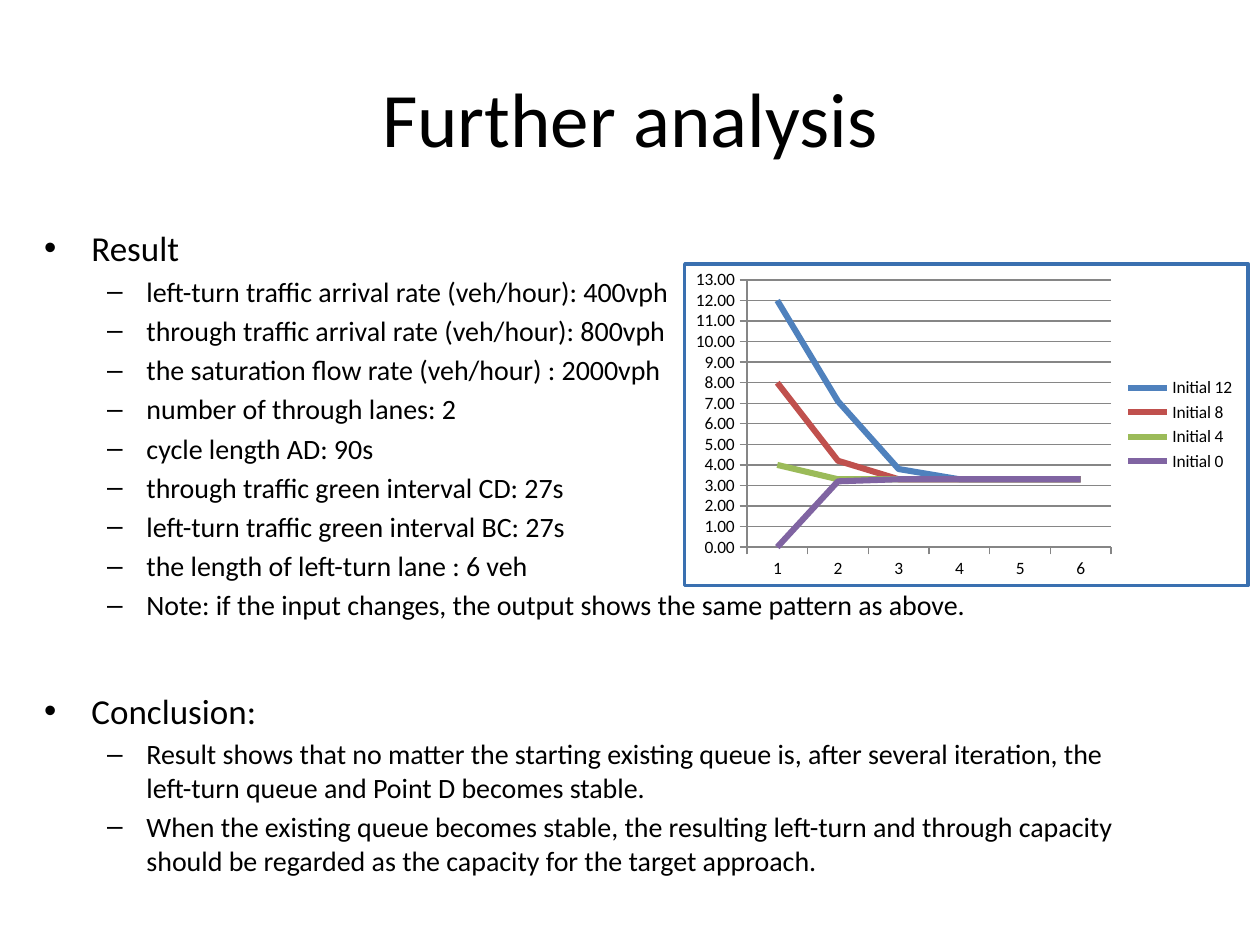
from lxml import etree
from pptx import Presentation
from pptx.chart.data import CategoryChartData
from pptx.dml.color import RGBColor
from pptx.enum import chart as charts, text
from pptx.oxml import parse_xml
from pptx.oxml.ns import nsdecls, qn
from pptx.util import Inches, Pt

FONT = "Calibri"
BLACK = RGBColor(0x00, 0x00, 0x00)
GRAY = RGBColor(0x86, 0x86, 0x86)
WHITE = RGBColor(0xFF, 0xFF, 0xFF)
BORDER = RGBColor(0x3A, 0x70, 0xB0)
BLUE = RGBColor(0x4F, 0x81, 0xBD)
RED = RGBColor(0xC0, 0x50, 0x4D)
GREEN = RGBColor(0x9B, 0xBB, 0x59)
PURPLE = RGBColor(0x80, 0x64, 0xA2)

RESULTS = [
    "left-turn traffic arrival rate (veh/hour): 400vph",
    "through traffic arrival rate (veh/hour): 800vph",
    "the saturation flow rate (veh/hour) : 2000vph",
    "number of through lanes: 2",
    "cycle length AD: 90s",
    "through traffic green interval CD: 27s",
    "left-turn traffic green interval BC: 27s",
    "the length of left-turn lane : 6 veh",
    "Note: if the input changes, the output shows the same pattern as above.",
]
CONCLUSIONS = [
    "Result shows that no matter the starting existing queue is, after several "
    "iteration, the left-turn queue and Point D becomes stable.",
    "When the existing queue becomes stable, the resulting left-turn and through "
    "capacity should be regarded as the capacity for the target approach.",
]
QUEUES = [
    ("Initial 12", BLUE, (12, 7.1, 3.8, 3.3, 3.3, 3.3)),
    ("Initial 8", RED, (8, 4.2, 3.3, 3.3, 3.3, 3.3)),
    ("Initial 4", GREEN, (4, 3.3, 3.3, 3.3, 3.3, 3.3)),
    ("Initial 0", PURPLE, (0, 3.2, 3.3, 3.3, 3.3, 3.3)),
]


def place(shape, box):
    shape.left, shape.top, shape.width, shape.height = map(Inches, box)


def add_span(para, words, size):
    span = para.add_run()
    span.text = words
    span.font.name = FONT
    span.font.size = Pt(size)
    span.font.color.rgb = BLACK


def fill_title(title, box, words):
    place(title, box)
    title.text_frame.vertical_anchor = text.MSO_ANCHOR.MIDDLE
    para = title.text_frame.paragraphs[0]
    para.alignment = text.PP_ALIGN.CENTER
    add_span(para, words, 44)


def fill_list(body, box, heading, items):
    """Heading bullet followed by dashed items; the template gives the marks."""
    place(body, box)
    frame = body.text_frame
    frame.auto_size = text.MSO_AUTO_SIZE.NONE
    add_span(frame.paragraphs[0], heading, 20)
    for item in items:
        para = frame.add_paragraph()
        para.level = 1
        add_span(para, item, 16)


def frame_chart(chart, fill, border, width):
    """Fill and outline the whole chart area."""
    area = parse_xml(
        f'<c:spPr {nsdecls("c", "a")}>'
        f'<a:solidFill><a:srgbClr val="{fill}"/></a:solidFill>'
        f'<a:ln w="{Pt(width)}"><a:solidFill><a:srgbClr val="{border}"/>'
        "</a:solidFill></a:ln></c:spPr>"
    )
    chart.element.find(qn("c:chart")).addnext(area)
    rounded = chart.element.find(qn("c:roundedCorners"))
    if rounded is None:
        rounded = etree.Element(qn("c:roundedCorners"))
        chart.element.find(qn("c:chart")).addprevious(rounded)
    rounded.set("val", "0")


def add_queue_chart(page, box):
    data = CategoryChartData(number_format="0.00")
    data.categories = [str(step) for step in range(1, 7)]
    for name, _, values in QUEUES:
        data.add_series(name, values)
    chart = page.shapes.add_chart(
        charts.XL_CHART_TYPE.LINE, *map(Inches, box), data).chart
    chart.has_title = False
    chart.font.name = FONT
    chart.font.size = Pt(10)
    chart.font.color.rgb = BLACK
    chart.has_legend = True
    chart.legend.position = charts.XL_LEGEND_POSITION.RIGHT
    chart.legend.include_in_layout = False
    frame_chart(chart, WHITE, BORDER, 2)

    for axis in (chart.category_axis, chart.value_axis):
        axis.major_tick_mark = charts.XL_TICK_MARK.OUTSIDE
        axis.minor_tick_mark = charts.XL_TICK_MARK.NONE
        axis.format.line.color.rgb = GRAY
    scale = chart.value_axis
    scale.minimum_scale, scale.maximum_scale, scale.major_unit = 0, 13, 1
    scale.tick_labels.number_format = "0.00"
    scale.tick_labels.number_format_is_linked = False
    scale.has_major_gridlines = True
    scale.major_gridlines.format.line.color.rgb = GRAY

    plot = chart.plots[0]
    plot.vary_by_categories = False
    for series, (_, color, _) in zip(plot.series, QUEUES):
        series.smooth = False
        series.marker.style = charts.XL_MARKER_STYLE.NONE
        series.format.line.color.rgb = color
        series.format.line.width = Pt(3.5)


def build_analysis_page(deck):
    page = deck.slides.add_slide(deck.slide_layouts.get_by_name("Two Content"))
    title, result, conclusion = list(page.placeholders)[:3]
    fill_title(title, (0.5, 0.3, 9, 1.25), "Further analysis")
    fill_list(result, (0.25, 1.75, 8.92, 2.33), "Result", RESULTS)
    fill_list(conclusion, (0.25, 5.42, 8.92, 1.92), "Conclusion:", CONCLUSIONS)
    add_queue_chart(page, (5.42, 2.08, 4.5, 2.58))


def main():
    deck = Presentation()
    deck.slide_width, deck.slide_height = Inches(10), Inches(7.5)
    build_analysis_page(deck)
    deck.save("out.pptx")


if __name__ == "__main__":
    main()
